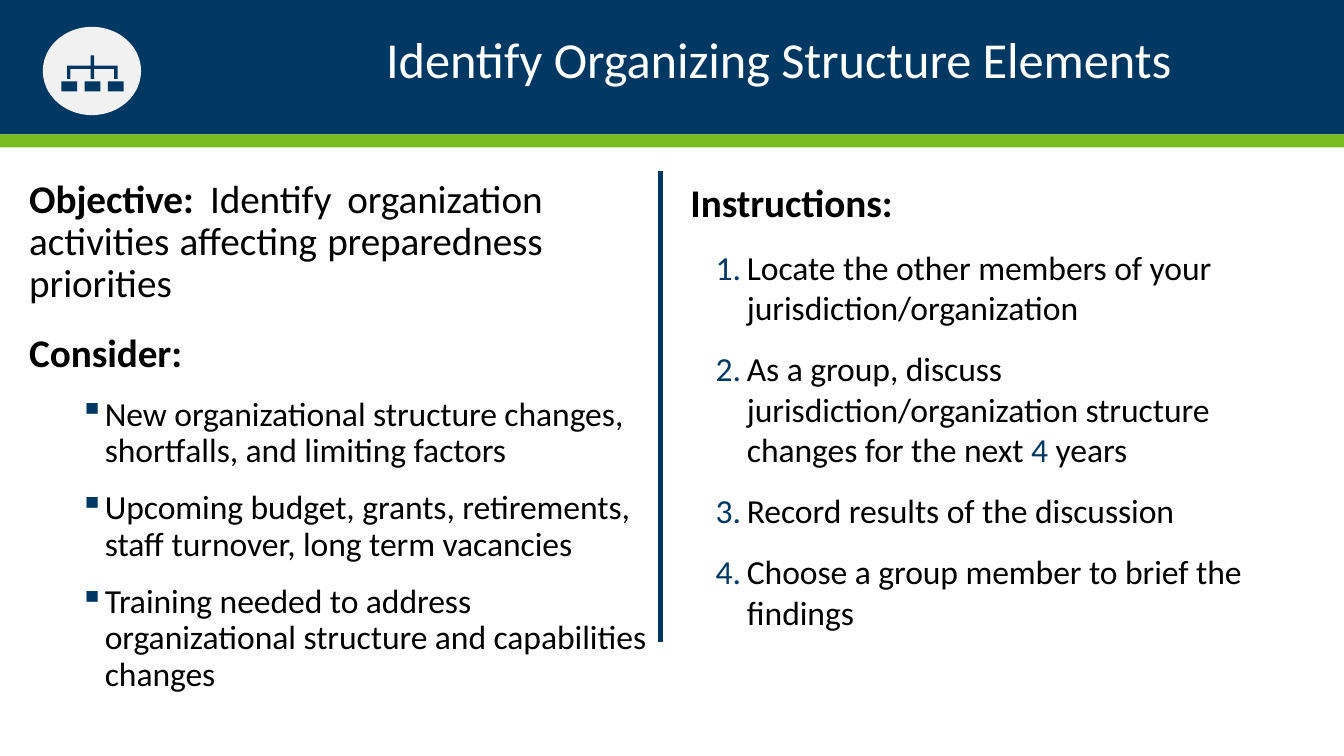
"""Build the organizing structure slide on a grid of 160 columns by 90 rows."""
from pptx import Presentation
from pptx.dml.color import RGBColor
from pptx.enum.shapes import MSO_CONNECTOR as Connector, MSO_SHAPE as Preset
from pptx.enum.text import MSO_ANCHOR as Anchor, PP_ALIGN as Align
from pptx.oxml.ns import qn
from pptx.util import Inches, Pt
from lxml.etree import SubElement

SLIDE_WIDTH, SLIDE_HEIGHT = Inches(13.33), Inches(7.5)
COLORS = {"navy": "003864", "green": "78BD20", "disc": "F1F1F1",
          "icon": "003763", "white": "FFFFFF", "black": "000000"}
CONSIDERATIONS = [
    "New organizational structure changes, shortfalls, and limiting factors",
    "Upcoming budget, grants, retirements, staff turnover, long term vacancies",
    "Training needed to address organizational structure and capabilities changes",
]
STEPS = [
    [("Locate the other members of your jurisdiction/organization", {})],
    [("As a group, discuss jurisdiction/organization structure changes for the next ", {}),
     ("4 ", {"color": "navy"}), ("years", {})],
    [("Record results of the discussion", {})],
    [("Choose a group member to brief the findings", {})],
]


def col(count):
    return round(SLIDE_WIDTH * count / 160)


def row(count):
    return round(SLIDE_HEIGHT * count / 90)


def rgb(name):
    return RGBColor.from_string(COLORS[name])


def paint(shape, color):
    shape.shadow.inherit = False
    shape.fill.solid()
    shape.fill.fore_color.rgb = rgb(color)
    shape.line.fill.background()


def add_block(page, preset, left, top, width, height, color):
    paint(page.shapes.add_shape(preset, col(left), row(top), col(width), row(height)), color)


def add_frame(page, left, top, width, height, inset_top):
    box = page.shapes.add_textbox(col(left), row(top), col(width), row(height))
    frame = box.text_frame
    frame.word_wrap = True
    frame.vertical_anchor = Anchor.TOP
    frame.margin_left = frame.margin_right = frame.margin_bottom = 0
    frame.margin_top = row(inset_top)
    return frame


def add_para(frame, before, margin=0, hanging=0, right=0, spacing=None, align=Align.LEFT):
    first = frame.paragraphs[0]
    para = frame.add_paragraph() if first.runs else first
    para.space_before = Pt(before)
    para.alignment = align
    if spacing:
        para.line_spacing = spacing
    properties = para._p.get_or_add_pPr()
    for name, value in (("marL", margin), ("marR", right), ("indent", -hanging)):
        properties.set(name, str(col(value)))
    return para


def add_text(para, text, size=24, bold=False, color="black"):
    span = para.add_run()
    span.text = text
    span.font.name = "Calibri"
    span.font.size = Pt(size)
    span.font.bold = bold
    span.font.color.rgb = rgb(color)
    span._r.get_or_add_rPr().set("spc", "-5")


def add_bullet(para, tag, **attributes):
    properties = para._p.get_or_add_pPr()
    tint = SubElement(properties, qn("a:buClr"))
    SubElement(tint, qn("a:srgbClr"), val=COLORS["navy"])
    SubElement(properties, qn(f"a:{tag}"), **attributes)


def add_divider(page, column, top, bottom):
    line = page.shapes.add_connector(Connector.STRAIGHT, col(column), row(top),
                                     col(column), row(bottom))
    line.line.color.rgb = rgb("navy")
    line.line.width = Pt(3.75)
    SubElement(line._element.spPr, qn("a:effectLst"))


def add_icon(page):
    add_block(page, Preset.OVAL, 5.1, 3.2, 11.7, 10.5, "disc")
    for index in range(3):
        add_block(page, Preset.RECTANGLE, 7.3 + 2.77 * index, 9.7, 1.9, 1.2, "icon")
    bracket = [(14, 7.8), (11.2, 7.8), (11.2, 6.6), (10.8, 6.6), (10.8, 7.8), (8, 7.8),
               (8, 9.4), (8.4, 9.4), (8.4, 8.2), (10.8, 8.2), (10.8, 9.4), (11.2, 9.4),
               (11.2, 8.2), (13.6, 8.2), (13.6, 9.4), (14, 9.4)]
    points = [(col(x), row(y)) for x, y in bracket]
    builder = page.shapes.build_freeform(*points[0])
    builder.add_line_segments(points[1:], close=True)
    paint(builder.convert_to_shape(), "icon")


def add_considerations(page):
    frame = add_frame(page, 3.36, 20.52, 74.16, 62.16, 0.8)
    objective = add_para(frame, 4.8, 0.12, right=12.9, spacing=Pt(30.2), align=Align.JUSTIFY)
    add_text(objective, "Objective: ", size=28, bold=True)
    add_text(objective, "Identify organization activities affecting preparedness priorities", size=28)
    add_text(add_para(frame, 16.4, 0.12), "Consider:", size=28, bold=True)
    for text in CONSIDERATIONS:
        para = add_para(frame, 15, 9.12, 3, spacing=Pt(25.9))
        add_bullet(para, "buChar", char="▪")
        add_text(para, text)


def add_instructions(page):
    frame = add_frame(page, 82.08, 18.12, 68.64, 57.36, 3.12)
    add_text(add_para(frame, 18.7, 0.12), "Instructions:", size=28, bold=True)
    for step in STEPS:
        para = add_para(frame, 15, 6.84, 3.72)
        add_bullet(para, "buAutoNum", type="arabicPeriod")
        for text, look in step:
            add_text(para, text, **look)


def main():
    deck = Presentation()
    deck.slide_width, deck.slide_height = SLIDE_WIDTH, SLIDE_HEIGHT
    page = deck.slides.add_slide(deck.slide_layouts[6])
    add_block(page, Preset.RECTANGLE, 0, 0, 160, 16, "navy")
    add_block(page, Preset.RECTANGLE, 0, 16, 160, 1.56, "green")
    title = add_frame(page, 30.48, 0.36, 118.8, 10.32, 3)
    add_text(add_para(title, 1, 15.48), "Identify Organizing Structure Elements",
             size=36, color="white")
    add_considerations(page)
    add_instructions(page)
    add_divider(page, 78.6, 20.4, 76.4)
    add_icon(page)
    deck.save("out.pptx")


if __name__ == "__main__":
    main()
